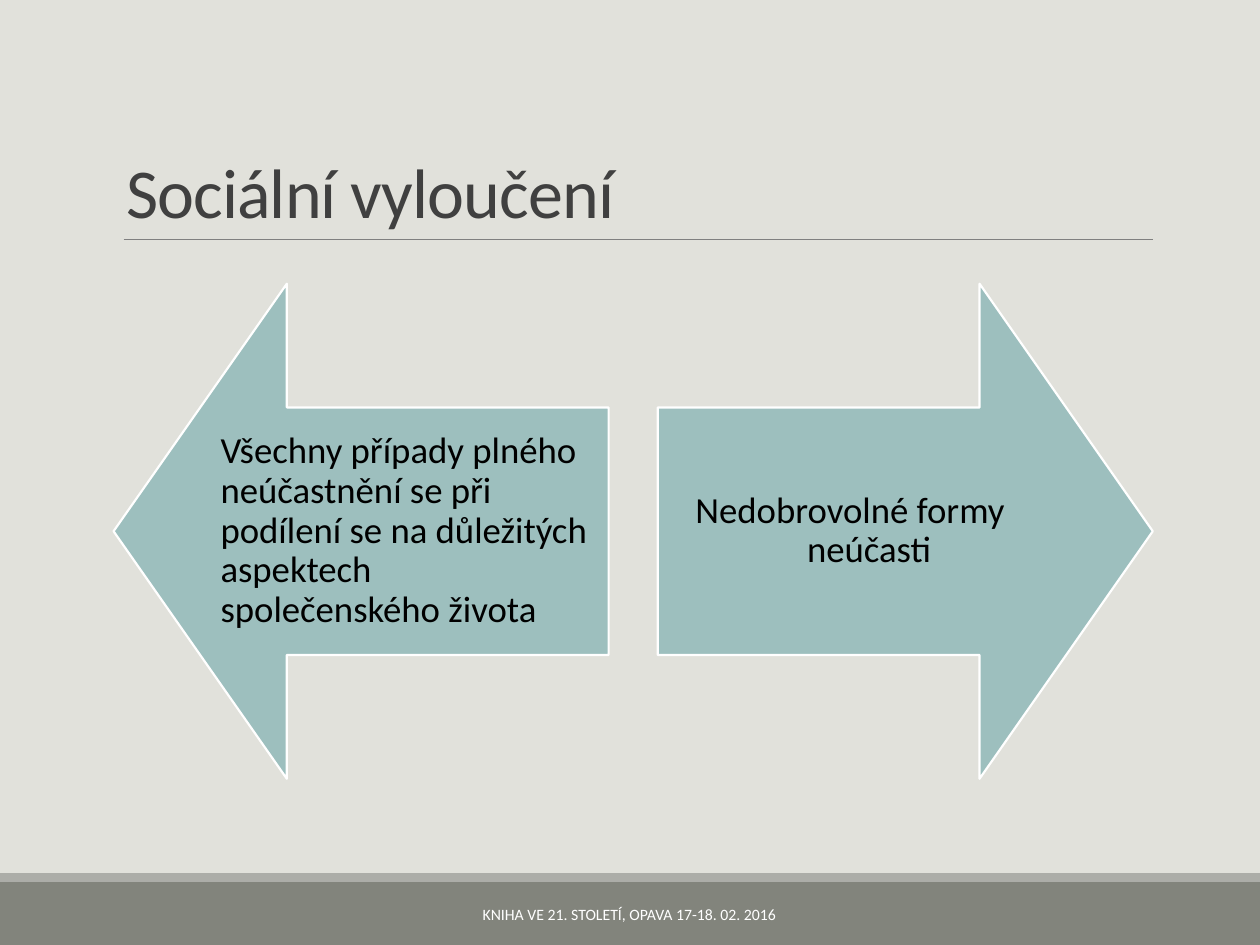
from lxml import etree
from pptx import Presentation
from pptx.dml.color import RGBColor
from pptx.enum.shapes import MSO_CONNECTOR, MSO_SHAPE
from pptx.enum.text import MSO_ANCHOR, PP_ALIGN
from pptx.oxml.ns import qn
from pptx.util import Cm, Pt

RECTANGLE = MSO_SHAPE.RECTANGLE
LEFT_ARROW, RIGHT_ARROW = MSO_SHAPE.LEFT_ARROW, MSO_SHAPE.RIGHT_ARROW
STRAIGHT = MSO_CONNECTOR.STRAIGHT
MIDDLE, BOTTOM = MSO_ANCHOR.MIDDLE, MSO_ANCHOR.BOTTOM
LEFT, CENTER = PP_ALIGN.LEFT, PP_ALIGN.CENTER

COLORS = {
    "background": "E1E1DB",
    "footer_band": "82847C",
    "footer_edge": "ACADA8",
    "rule": "808080",
    "title": "404040",
    "arrow": "9DBFBE",
    "white": "FFFFFF",
    "black": "000000",
}


def color(name):
    return RGBColor.from_string(COLORS[name])


def style_paragraph(paragraph, size, color_name, alignment):
    paragraph.alignment = alignment
    paragraph.font.name = "Calibri"
    paragraph.font.size = Pt(size)
    paragraph.font.color.rgb = color(color_name)


presentation = Presentation()
presentation.slide_width = Cm(25.4)
presentation.slide_height = Cm(19.05)
slide = presentation.slides.add_slide(presentation.slide_layouts[5])
slide.background.fill.solid()
slide.background.fill.fore_color.rgb = color("background")

# Footer bands
for top, height, name in [(17.78, 1.27, "footer_band"), (17.6, 0.18, "footer_edge")]:
    band = slide.shapes.add_shape(RECTANGLE, 0, Cm(top), Cm(25.4), Cm(height))
    band.shadow.inherit = False
    band.fill.solid()
    band.fill.fore_color.rgb = color(name)
    band.line.fill.background()

# Title and the rule below it
title = slide.shapes.title
title.left, title.top, title.width, title.height = Cm(2.29), Cm(0.79), Cm(20.96), Cm(4.04)
title.text_frame.text = "Sociální vyloučení"
title.text_frame.vertical_anchor = BOTTOM
paragraph = title.text_frame.paragraphs[0]
style_paragraph(paragraph, 40, "title", LEFT)
paragraph.line_spacing = 0.85
paragraph.runs[0].font._element.set("spc", "-50")

rule = slide.shapes.add_connector(STRAIGHT, Cm(2.49), Cm(4.83), Cm(23.24), Cm(4.83))
rule.line.color.rgb = color("rule")
rule.line.width = Pt(0.5)
etree.SubElement(rule._element.spPr, qn("a:effectLst"))

# Opposing arrows: kind, left, text, left margin and first-line indent
arrows = [
    (LEFT_ARROW, 2.29,
     "Všechny případy plného neúčastnění se při podílení se na důležitých "
     "aspektech společenského života", 0, 0),
    (RIGHT_ARROW, 13.26, "Nedobrovolné formy neúčasti", 2.6, -2.25),
]
for kind, left, text, margin, indent in arrows:
    arrow = slide.shapes.add_shape(kind, Cm(left), Cm(5.72), Cm(9.98), Cm(9.98))
    arrow.adjustments[0] = 0.5
    arrow.adjustments[1] = 0.35
    arrow.shadow.inherit = False
    arrow.fill.solid()
    arrow.fill.fore_color.rgb = color("arrow")
    arrow.line.color.rgb = color("white")
    arrow.line.width = Pt(1.25)
    frame = arrow.text_frame
    frame.word_wrap = True
    frame.vertical_anchor = MIDDLE
    frame.margin_left = frame.margin_right = Cm(0.41)
    frame.margin_top = frame.margin_bottom = Cm(0.41)
    frame.text = text
    paragraph = frame.paragraphs[0]
    style_paragraph(paragraph, 21, "black", LEFT)
    paragraph.line_spacing = 0.9
    properties = paragraph._p.get_or_add_pPr()
    properties.set("marL", str(Cm(margin)))
    properties.set("indent", str(Cm(indent)))

# Footer text
footer = slide.shapes.add_textbox(Cm(7.67), Cm(17.93), Cm(10.03), Cm(1.02))
footer.text_frame.word_wrap = True
footer.text_frame.vertical_anchor = MIDDLE
footer.text_frame.text = "KNIHA VE 21. STOLETÍ, OPAVA 17-18. 02. 2016"
style_paragraph(footer.text_frame.paragraphs[0], 9, "white", CENTER)

presentation.save("out.pptx")
